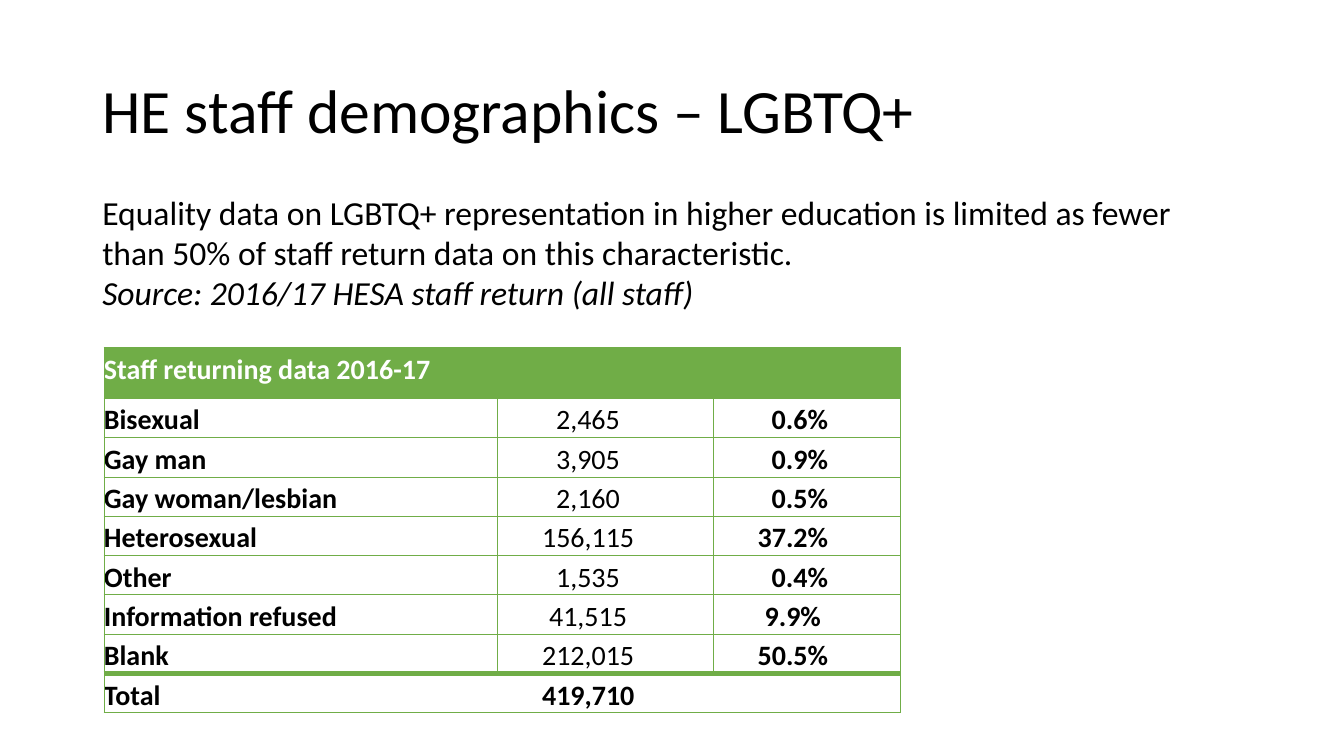
from lxml.etree import SubElement
from pptx import Presentation
from pptx.dml.color import RGBColor
from pptx.enum.text import MSO_ANCHOR, MSO_AUTO_SIZE, PP_ALIGN
from pptx.oxml.ns import qn
from pptx.util import Pt

BLACK = RGBColor(0x00, 0x00, 0x00)
WHITE = RGBColor(0xFF, 0xFF, 0xFF)
GREEN = RGBColor(0x70, 0xAD, 0x47)


def add_run(paragraph, text, size, color=BLACK, bold=False, italic=False):
    run = paragraph.add_run()
    run.text = text
    run.font.name = "Calibri"
    run.font.size = Pt(size)
    run.font.color.rgb = color
    run.font.bold = bold
    run.font.italic = italic


def set_border(cell, side, width):
    line = SubElement(cell._tc.get_or_add_tcPr(), qn(f"a:ln{side}"), w=str(Pt(width)))
    if width:
        fill = SubElement(line, qn("a:solidFill"))
        SubElement(fill, qn("a:srgbClr"), val=str(GREEN))
    else:
        SubElement(line, qn("a:noFill"))


presentation = Presentation()
presentation.slide_width = Pt(960)
presentation.slide_height = Pt(540)
slide = presentation.slides.add_slide(presentation.slide_layouts[5])

title = slide.shapes.title
title.left, title.top, title.width, title.height = Pt(66), Pt(28.8), Pt(828), Pt(104.4)
title.text_frame.vertical_anchor = MSO_ANCHOR.MIDDLE
paragraph = title.text_frame.paragraphs[0]
paragraph.alignment = PP_ALIGN.LEFT
paragraph.line_spacing = 0.9
add_run(paragraph, "HE staff demographics – LGBTQ+", 44)

summary = slide.shapes.add_textbox(Pt(66), Pt(133.2), Pt(803.5), Pt(94.5))
summary_frame = summary.text_frame
summary_frame.word_wrap = True
summary_frame.auto_size = MSO_AUTO_SIZE.SHAPE_TO_FIT_TEXT
add_run(
    summary_frame.paragraphs[0],
    "Equality data on LGBTQ+ representation in higher education is limited "
    "as fewer than 50% of staff return data on this characteristic.",
    24,
)
add_run(summary_frame.add_paragraph(), "Source: 2016/17 HESA staff return (all staff)", 24, italic=True)

staff_rows = [
    ("Staff returning data 2016-17", "", "", 0),
    ("Bisexual", "2,465", "0.6%", 42),
    ("Gay man", "3,905", "0.9%", 42),
    ("Gay woman/lesbian", "2,160", "0.5%", 42),
    ("Heterosexual", "156,115", "37.2%", 32),
    ("Other", "1,535", "0.4%", 42),
    ("Information refused", "41,515", "9.9%", 37),
    ("Blank", "212,015", "50.5%", 32),
    ("Total", "419,710", "", 32),
]
column_widths = [281, 154, 134]
total_row = len(staff_rows) - 1
last_column = len(column_widths) - 1

table = slide.shapes.add_table(
    len(staff_rows), len(column_widths), Pt(74.2), Pt(248.4), Pt(569), Pt(260.8)
).table
table.horz_banding = False
for column, width in zip(table.columns, column_widths):
    column.width = Pt(width)

for row_index, (*texts, indent) in enumerate(staff_rows):
    is_header = row_index == 0
    is_total = row_index == total_row
    table.rows[row_index].height = Pt(36 if is_header else 28.1)
    for column_index, text in enumerate(texts):
        cell = table.cell(row_index, column_index)
        cell.margin_left = cell.margin_right = cell.margin_top = cell.margin_bottom = 0
        set_border(cell, "L", 0 if is_total and column_index > 0 else 0.5)
        set_border(cell, "R", 0 if is_total and column_index < last_column else 0.5)
        set_border(cell, "T", 4 if is_total else 0.5)
        set_border(cell, "B", 4 if row_index == total_row - 1 else 0.5)
        cell.fill.solid()
        cell.fill.fore_color.rgb = GREEN if is_header else WHITE
        if text:
            paragraph = cell.text_frame.paragraphs[0]
            paragraph.line_spacing = 1.15
            if column_index > 0:
                paragraph._p.get_or_add_pPr().set("marL", str(Pt(indent)))
            add_run(
                paragraph,
                text,
                20,
                color=WHITE if is_header else BLACK,
                bold=column_index != 1 or is_total,
            )

presentation.save("out.pptx")
